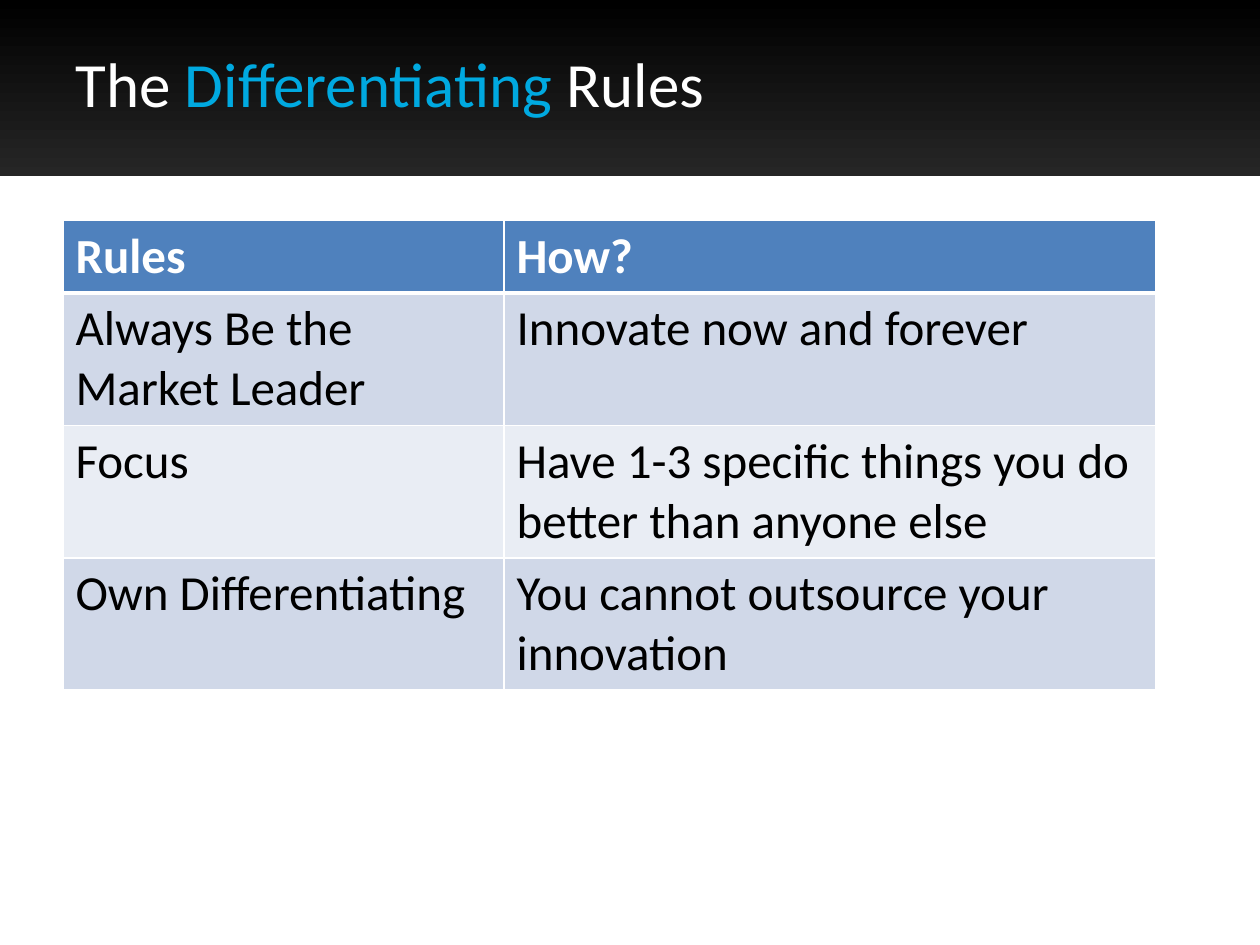
from lxml import etree
from pptx import Presentation
from pptx.dml.color import RGBColor
from pptx.enum.shapes import MSO_SHAPE
from pptx.enum.text import MSO_ANCHOR, PP_ALIGN
from pptx.oxml.ns import qn
from pptx.util import Inches, Pt

RECT, TOP, LEFT = MSO_SHAPE.RECTANGLE, MSO_ANCHOR.TOP, PP_ALIGN.LEFT
BLACK = RGBColor(0x00, 0x00, 0x00)
GRAY = RGBColor(0x26, 0x26, 0x26)
WHITE = RGBColor(0xFF, 0xFF, 0xFF)
CYAN = RGBColor(0x00, 0xA9, 0xE0)
BLUE = RGBColor(0x4F, 0x81, 0xBD)
BANDS = (RGBColor(0xE9, 0xED, 0xF4), RGBColor(0xD0, 0xD8, 0xE8))

# The grid: 20 columns of half an inch, 15 rows of half an inch
COLS, ROWS = 20, 15
HEAD = {"name": "Calibri", "size": Pt(36), "bold": False}
CELL = {"name": "Calibri", "size": Pt(28)}


def apply(item, values):
    for key, value in values.items():
        setattr(item, key, value)


class Deck:
    def __init__(self, wide, high):
        self.prs = Presentation()
        apply(self.prs, {"slide_width": Inches(wide), "slide_height": Inches(high)})
        self.slide = self.prs.slides.add_slide(self.prs.slide_layouts[5])
        self.unit = self.prs.slide_width / COLS, self.prs.slide_height / ROWS

    def box(self, col, row, wide, high):
        across, down = self.unit
        return [round(n) for n in (col * across, row * down, wide * across, high * down)]

    def label(self, para, text, color, style):
        run = para.add_run()
        run.text = text
        apply(run.font, style)
        run.font.color.rgb = color

    def band(self, area, colors):
        shape = self.slide.shapes.add_shape(RECT, *self.box(*area))
        shape.shadow.inherit = False
        shape.line.fill.background()
        shape.fill.gradient()
        shape.fill.gradient_angle = 270
        for stop, spot, color in zip(shape.fill.gradient_stops, (0, 1), colors):
            stop.position = spot
            stop.color.rgb = color
        # Behind the title
        self.slide.shapes._spTree.insert(2, shape._element)

    def title(self, area, parts):
        shape = self.slide.shapes.title
        apply(shape, dict(zip(("left", "top", "width", "height"), self.box(*area))))
        shape.text_frame.vertical_anchor = TOP
        para = shape.text_frame.paragraphs[0]
        para.alignment = LEFT
        for text, color in parts:
            self.label(para, text, color, HEAD)

    def border(self, cell, side, width):
        props = cell._tc.get_or_add_tcPr()
        line = etree.SubElement(props, qn("a:ln" + side), w=str(Pt(width)))
        fill = etree.SubElement(line, qn("a:solidFill"))
        etree.SubElement(fill, qn("a:srgbClr"), val=str(WHITE))

    def table(self, area, widths, heights, data):
        frame = self.slide.shapes.add_table(len(data), len(widths), *self.box(*area))
        grid = frame.table
        for col, wide in zip(grid.columns, widths):
            col.width = round(wide * self.unit[0])
        for i, (row, high, texts) in enumerate(zip(grid.rows, heights, data)):
            row.height = round(high * self.unit[1])
            first = i == 0
            # The rule under the header is thicker
            sides = {"L": 1, "R": 1, "T": 3 if i == 1 else 1, "B": 3 if first else 1}
            for cell, text in zip(row.cells, texts):
                for side, width in sides.items():
                    self.border(cell, side, width)
                cell.fill.solid()
                cell.fill.fore_color.rgb = BLUE if first else BANDS[i % 2]
                self.label(cell.text_frame.paragraphs[0], text,
                           WHITE if first else BLACK, {**CELL, "bold": first})


def main():
    deck = Deck(10, 7.5)

    # Header band and title
    deck.band((0, 0, COLS, 2.8), (BLACK, GRAY))
    deck.title((1, 0.6, 18, 2.24),
               [("The ", WHITE), ("Differentiating", CYAN), (" Rules", WHITE)])

    # Table of rules
    data = [
        ("Rules", "How?"),
        ("Always Be the Market Leader", "Innovate now and forever"),
        ("Focus", "Have 1-3 specific things you do better than anyone else"),
        ("Own Differentiating", "You cannot outsource your innovation"),
    ]
    deck.table((1, 3.5, 17.34, 7.34), (7, 10.34), (1.14,) + (2.07,) * 3, data)

    deck.prs.save("out.pptx")


if __name__ == "__main__":
    main()
